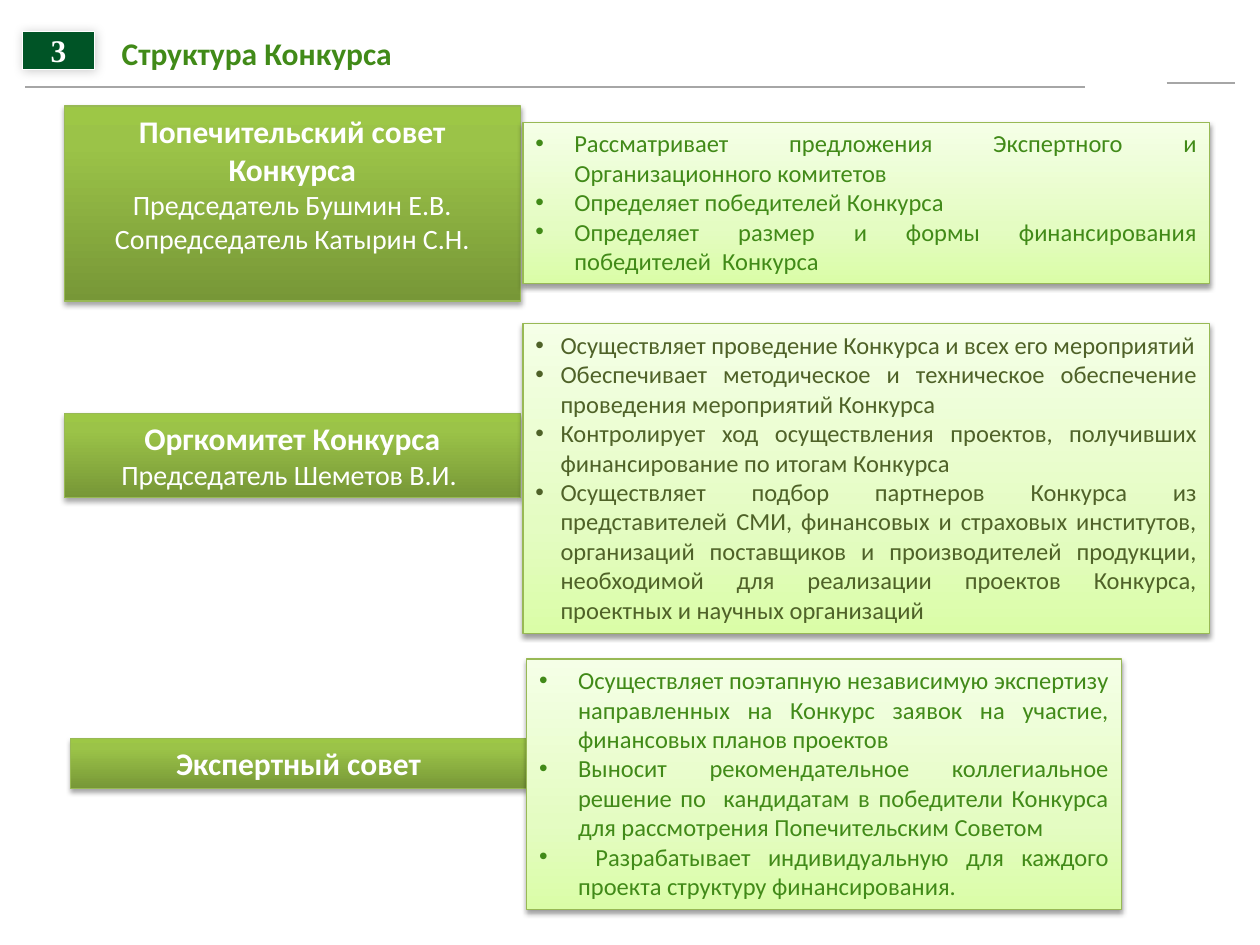
from copy import deepcopy
from lxml.etree import SubElement as Sub
from pptx import Presentation
from pptx.dml.color import RGBColor as RGB
from pptx.enum.shapes import MSO_CONNECTOR as Link, MSO_SHAPE as Form
from pptx.enum.text import MSO_ANCHOR as Anchor, PP_ALIGN as Align
from pptx.oxml.ns import qn
from pptx.util import Inches, Pt

WIDTH, HEIGHT = Inches(10), Inches(7.5)
COL, ROW = WIDTH / 100, HEIGHT / 75

WHITE = RGB(0xFF, 0xFF, 0xFF)
GRAY = RGB(0xA6, 0xA6, 0xA6)
DARK = RGB(0x00, 0x54, 0x26)
GREEN = RGB(0x41, 0x8A, 0x18)
OLIVE = RGB(0x4F, 0x62, 0x28)
EDGE = RGB(0x98, 0xB9, 0x55)
DEEP = ((0, RGB(0x77, 0x97, 0x37)), (0.8, RGB(0x9B, 0xC3, 0x48)),
        (1, RGB(0x9D, 0xC7, 0x46)))
PALE = ((0, RGB(0xDA, 0xFD, 0xA7)), (0.35, RGB(0xE4, 0xFC, 0xC2)),
        (1, RGB(0xF5, 0xFF, 0xE7)))

HEAD = {"name": "Calibri", "size": Pt(18), "bold": True}
CHAIR = {"name": "Calibri", "size": Pt(16), "bold": False}
ITEM = {"name": "Calibri", "size": Pt(14)}
DIGIT = {"name": "Times New Roman", "size": Pt(18), "bold": True}

BODIES = (
    ((5.1, 8.4, 36.2, 15.5), "Попечительский совет Конкурса",
     ("Председатель Бушмин Е.В.", "Сопредседатель Катырин С.Н.")),
    ((5.1, 32.8, 36.2, 6.7), "Оргкомитет Конкурса",
     ("Председатель Шеметов В.И. ",)),
    ((5.6, 58.6, 36.2, 4), "Экспертный совет", ()),
)
TASKS = (
    ((41.5, 25.7, 54.5, 24.6), OLIVE, 2, (
        "Осуществляет проведение Конкурса и всех его мероприятий",
        "Обеспечивает методическое и техническое обеспечение проведения мероприятий Конкурса",
        "Контролирует ход осуществления проектов, получивших финансирование по итогам Конкурса",
        "Осуществляет подбор партнеров Конкурса из представителей СМИ, финансовых и страховых "
        "институтов, организаций поставщиков и производителей продукции, необходимой для "
        "реализации проектов Конкурса, проектных и научных организаций")),
    ((41.5, 9.7, 54.5, 12.8), GREEN, 3.1, (
        "Рассматривает предложения Экспертного и Организационного комитетов",
        "Определяет победителей Конкурса",
        "Определяет размер и формы финансирования победителей  Конкурса")),
    ((41.8, 52.3, 47.2, 19.9), GREEN, 3.1, (
        "Осуществляет поэтапную независимую экспертизу направленных на Конкурс заявок на "
        "участие, финансовых планов проектов",
        "Выносит рекомендательное коллегиальное решение по  кандидатам в победители Конкурса "
        "для рассмотрения Попечительским Советом",
        " Разрабатывает индивидуальную для каждого проекта структуру финансирования.")),
)


def place(left, top, width, height):
    return round(left * COL), round(top * ROW), round(width * COL), round(height * ROW)


def rule(slide, start, end, top):
    y = round(top * ROW)
    line = slide.shapes.add_connector(
        Link.STRAIGHT, round(start * COL), y, round(end * COL), y)
    line.line.color.rgb = GRAY
    line.line.width = Pt(1)
    Sub(line._element.spPr, qn("a:effectLst"))


def shade(shape, alpha, blur, dist, angle):
    shape.shadow.inherit = False
    effects = shape._element.spPr.find(qn("a:effectLst"))
    outer = Sub(effects, qn("a:outerShdw"), blurRad=str(Pt(blur)), dist=str(Pt(dist)),
                dir=str(angle * 60000), rotWithShape="0")
    color = Sub(outer, qn("a:srgbClr"), val="000000")
    Sub(color, qn("a:alpha"), val=str(alpha * 1000))


def blend(fill, stops):
    fill.gradient()
    fill.gradient_angle = 90
    first = fill._xPr.find(".//" + qn("a:gs"))
    first.addnext(deepcopy(first))
    for stop, (spot, color) in zip(fill.gradient_stops, stops):
        stop.position = spot
        stop.color.rgb = color


def panel(slide, area, edge, shadow):
    shape = slide.shapes.add_shape(Form.RECTANGLE, *place(*area))
    shape.line.color.rgb = edge
    shape.line.width = Pt(0.75)
    shade(shape, *shadow)
    return shape


def setup(shape, anchor, inset=True):
    frame = shape.text_frame
    frame.word_wrap = True
    frame.vertical_anchor = anchor
    if not inset:
        for side in ("left", "right", "top", "bottom"):
            setattr(frame, f"margin_{side}", 0)
    return frame


def write(frame, lines, align, indent=0):
    for i, (text, style, color) in enumerate(lines):
        para = frame.add_paragraph() if i else frame.paragraphs[0]
        para.alignment = align
        if indent:
            props = para._p.get_or_add_pPr()
            depth = round(indent * COL)
            props.set("marL", str(depth))
            props.set("indent", str(-depth))
            Sub(props, qn("a:buFont"), typeface="Arial")
            Sub(props, qn("a:buChar"), char="•")
        run = para.add_run()
        run.text = text
        for key, value in style.items():
            setattr(run.font, key, value)
        run.font.color.rgb = color


def body(slide, area, name, chairs):
    shape = panel(slide, area, EDGE, (35, 3.1, 1.8, 90))
    blend(shape.fill, DEEP)
    lines = [(name, HEAD, WHITE)] + [(chair, CHAIR, WHITE) for chair in chairs]
    write(setup(shape, Anchor.TOP), lines, Align.CENTER)


def tasks(slide, area, color, indent, items):
    shape = panel(slide, area, EDGE, (38, 3.1, 1.6, 90))
    blend(shape.fill, PALE)
    lines = [(item, ITEM, color) for item in items]
    write(setup(shape, Anchor.TOP), lines, Align.JUSTIFY, indent)


def title(slide, text):
    box = slide.shapes.add_textbox(*place(9.1, 2.7, 31.5, 3))
    write(setup(box, Anchor.MIDDLE, False), [(text, HEAD, GREEN)], Align.LEFT)


def badge(slide, text):
    shape = panel(slide, (1.8, 2.5, 5.7, 3), WHITE, (20, 6, 1, 45))
    shape.fill.solid()
    shape.fill.fore_color.rgb = DARK
    write(setup(shape, Anchor.MIDDLE, False), [(text, DIGIT, WHITE)], Align.CENTER)


def main():
    deck = Presentation()
    deck.slide_width, deck.slide_height = WIDTH, HEIGHT
    slide = deck.slides.add_slide(deck.slide_layouts[6])
    rule(slide, 2, 86.1, 6.9)
    rule(slide, 92.6, 98, 6.6)
    for entry in BODIES:
        body(slide, *entry)
    for entry in TASKS:
        tasks(slide, *entry)
    title(slide, " Структура Конкурса")
    badge(slide, "3")
    deck.save("out.pptx")


if __name__ == "__main__":
    main()
